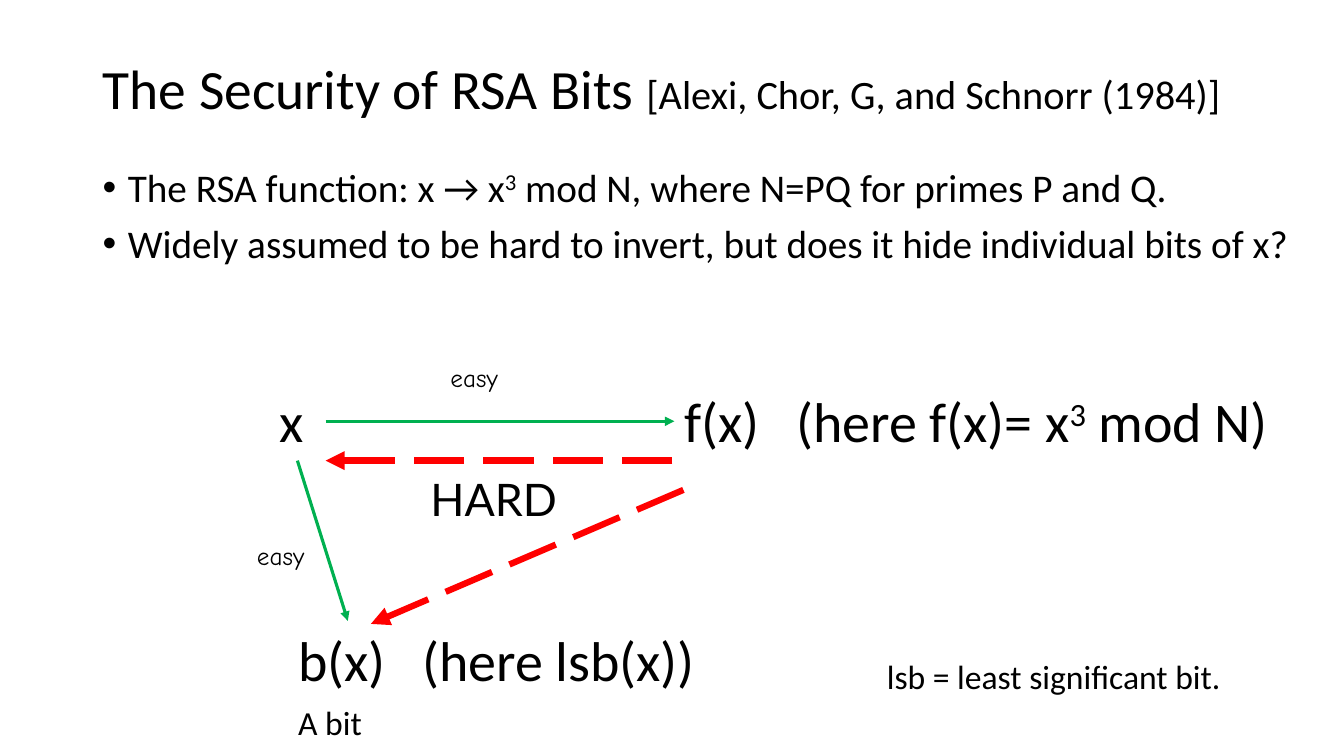
from lxml import etree
from pptx import Presentation
from pptx import util as u
from pptx.dml.color import RGBColor
from pptx.enum import dml, shapes, text
from pptx.oxml.ns import qn


def rgb(value):
    return RGBColor.from_string(value)


class Board:
    """Style and current slide; lengths are percent of slide width and height."""

    INK, EASY, HARD = "000000", "00B050", "FF0000"
    FONT, HAND, LABEL = "Calibri", "Comic Neue", "Lato"

    def __init__(self, prs):
        self.w, self.h = prs.slide_width, prs.slide_height
        self.s = prs.slides.add_slide(prs.slide_layouts[5])

    def x(self, share):
        return u.Emu(round(self.w * share / 100))

    def y(self, share):
        return u.Emu(round(self.h * share / 100))

    def box(self, left, top, width, height):
        return self.x(left), self.y(top), self.x(width), self.y(height)

    def style(self, p, size, font):
        p.font.size, p.font.name = u.Pt(size), font
        p.font.color.rgb = rgb(self.INK)

    def fill_text(self, p, words):
        """Write the words; a part between carets is superscript."""
        for i, part in enumerate(words.split("^")):
            r = p.add_run()
            r.text = part
            if i % 2:
                r._r.get_or_add_rPr().set("baseline", "30000")

    def title(self, area, parts):
        sp = self.s.shapes.title
        sp.left, sp.top, sp.width, sp.height = self.box(*area)
        tf = sp.text_frame
        tf.auto_size = text.MSO_AUTO_SIZE.NONE
        tf.vertical_anchor = text.MSO_ANCHOR.MIDDLE
        p = tf.paragraphs[0]
        p.alignment, p.line_spacing = text.PP_ALIGN.LEFT, 0.9
        for words, size in parts:
            r = p.add_run()
            r.text = words
            self.style(r, size, self.FONT)

    def label(self, area, words, size, font=FONT, wrap=True, tab=None):
        tf = self.s.shapes.add_textbox(*self.box(*area)).text_frame
        tf.word_wrap = wrap
        p = tf.paragraphs[0]
        self.style(p, size, font)
        self.fill_text(p, words)
        if tab:
            stops = etree.Element(qn("a:tabLst"))
            etree.SubElement(stops, qn("a:tab"), pos=str(u.Inches(tab)), algn="l")
            p._p.get_or_add_pPr().insert(0, stops)

    def bullets(self, area, lines, size):
        tf = self.s.shapes.add_textbox(*self.box(*area)).text_frame
        tf.word_wrap = True
        for i, words in enumerate(lines):
            p = tf.add_paragraph() if i else tf.paragraphs[0]
            p.line_spacing, p.space_before = 0.9, u.Pt(10)
            self.style(p, size, self.FONT)
            self.fill_text(p, words)
            pPr = p._p.get_or_add_pPr()
            indent = u.Inches(0.25)
            pPr.set("marL", str(indent))
            pPr.set("indent", str(-indent))
            mark = etree.Element(qn("a:buChar"), char="•")
            face = etree.Element(qn("a:buFont"), typeface="Arial")
            pPr.find(qn("a:defRPr")).addprevious(face)
            face.addnext(mark)

    def arrow(self, start, end, hard=False):
        (x1, y1), (x2, y2) = start, end
        c = self.s.shapes.add_connector(shapes.MSO_CONNECTOR.STRAIGHT,
                                        self.x(x1), self.y(y1), self.x(x2), self.y(y2))
        c.line.color.rgb = rgb(self.HARD if hard else self.EASY)
        c.line.width = u.Pt(4.5 if hard else 2.25)
        if hard:
            c.line.dash_style = dml.MSO_LINE.LONG_DASH
        etree.SubElement(c.line._get_or_add_ln(), qn("a:tailEnd"), type="triangle")
        etree.SubElement(c._element.spPr, qn("a:effectLst"))


def main():
    prs = Presentation()
    prs.slide_width, prs.slide_height = u.Inches(13.333), u.Inches(7.5)
    b = Board(prs)

    # Title and statement
    b.title((6.9, 5.33, 86.25, 13.47),
            [("The Security of RSA Bits ", 39.6),
             ("[Alexi, Chor, G, and Schnorr (1984)]", 28.8)])
    b.bullets((6.9, 21.6, 90.83, 16.13),
              ["The RSA function: x → x^3^ mod N, where N=PQ for primes P and Q.",
               "Widely assumed to be hard to invert, but does it hide individual bits of x?"],
              28)

    # Nodes of the diagram
    top, node_h = 50.53, 10.27
    b.label((20.03, top, 4.13, node_h), "x", 40)
    b.label((50.18, top, 47.48, node_h), "f(x)\t(here f(x)= x^3^ mod N)", 40, tab=1.11)
    b.label((21.45, 82.13, 33.3, node_h), "b(x)\t(here lsb(x))", 40, tab=1.23)

    # Easy and hard directions
    b.arrow((24.23, 55.73), (50.18, 55.73))
    b.arrow((22.13, 60.93), (25.88, 82.13))
    b.arrow((50.03, 60.93), (24.23, 60.93), hard=True)
    b.arrow((50.85, 64.8), (27.6, 82.53), hard=True)
    for left, row in ((32.78, 47.33), (18.38, 70.8)):
        b.label((left, row, 5.4, 5.33), "easy", 18, b.HAND, wrap=False)
    b.label((31.28, 61.73, 11.63, 8.53), "HARD", 32, b.LABEL)

    # Notes on the bit
    b.label((21.45, 92.13, 6.75, 6.67), "A bit", 24)
    b.label((65.25, 86.13, 30, 6.67), "lsb = least significant bit.", 24)

    prs.save("out.pptx")


if __name__ == "__main__":
    main()
